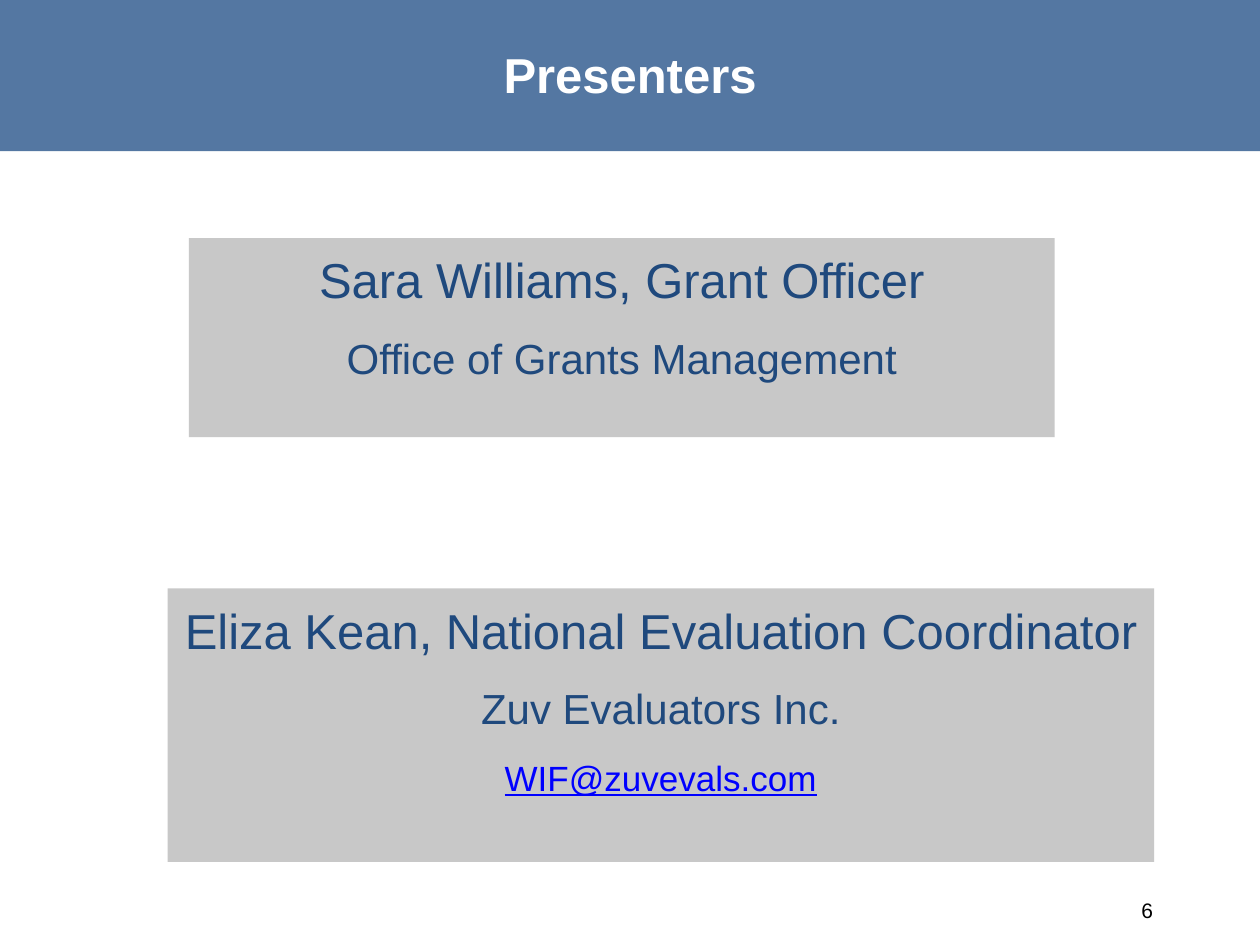
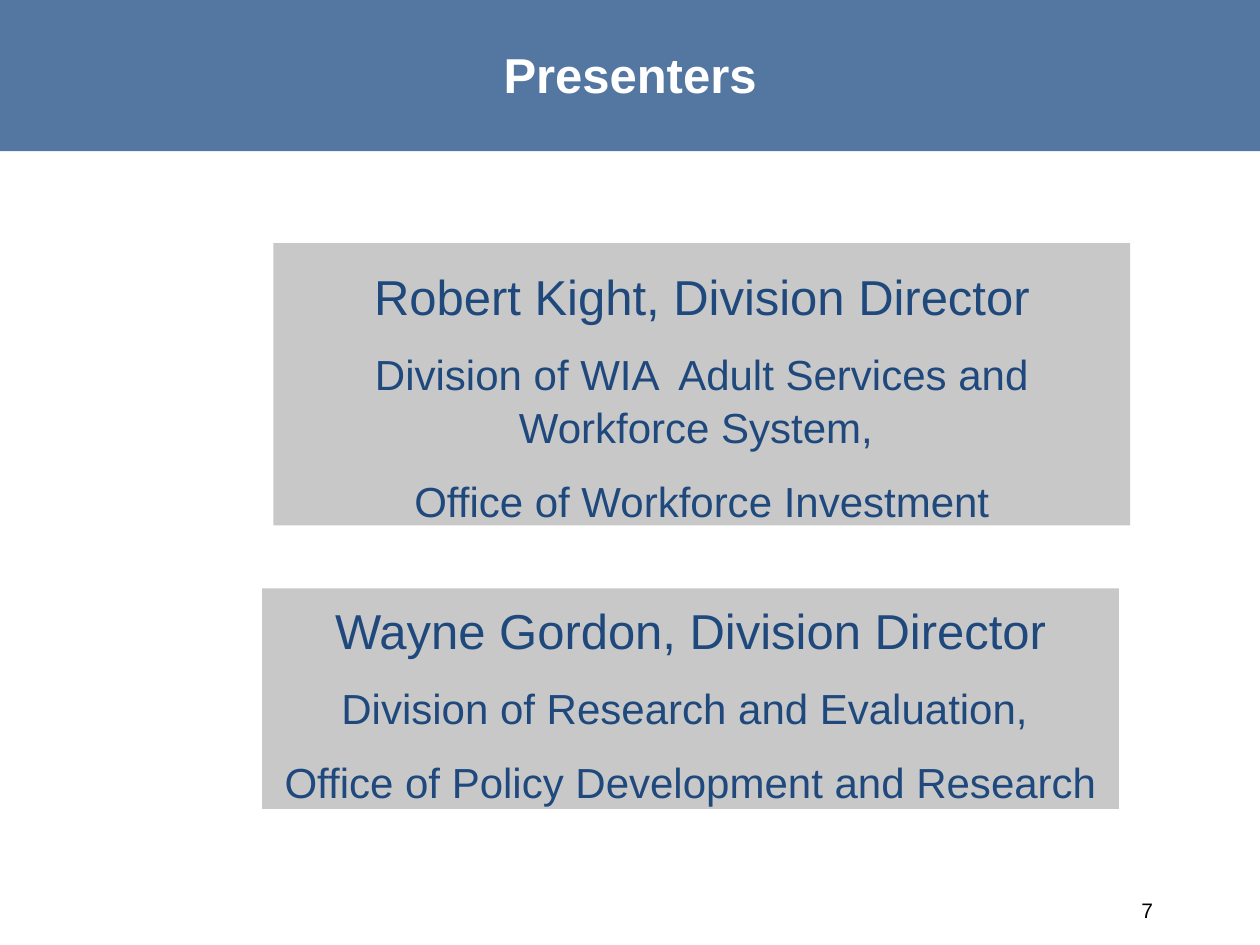
"""Build the two presenter slides."""
from lxml import etree
from pptx import Presentation
from pptx.dml.color import RGBColor
from pptx.enum.shapes import MSO_SHAPE
from pptx.enum.text import MSO_ANCHOR, PP_ALIGN
from pptx.oxml.ns import qn
from pptx.util import Inches, Pt

RECT = MSO_SHAPE.RECTANGLE
TOP, MIDDLE = MSO_ANCHOR.TOP, MSO_ANCHOR.MIDDLE
CENTER, RIGHT = PP_ALIGN.CENTER, PP_ALIGN.RIGHT

COLORS = {"band": "376092", "card": "BFBFBF", "text": "1F497D",
          "title": "FFFFFF", "link": "0000FF", "number": "000000"}
TITLE = "Presenters"
FIRST_NUMBER = 6
OPACITY = 85
GAP = 6
LEADING = 1.05

NAME = {"size": 28}
OFFICE = {"size": 24}
EMAIL = {"size": 20, "color": "link", "underline": True}

SLIDES = [
    [((1.5, 1.89, 6.87, 1.58), [
        ("Sara Williams, Grant Officer", NAME),
        ("Office of Grants Management", OFFICE)]),
     ((1.33, 4.67, 7.83, 2.17), [
         ("Eliza Kean, National Evaluation Coordinator", NAME),
         ("Zuv Evaluators Inc.", OFFICE),
         ("WIF@zuvevals.com", EMAIL)])],
    [((2.17, 1.93, 6.8, 2.24), [
        ("Robert Kight, Division Director", {**NAME, "leading": 1.25}),
        ("Division of WIA  Adult Services and Workforce System, ", OFFICE),
        ("Office of Workforce Investment", OFFICE)]),
     ((2.08, 4.67, 6.8, 1.75), [
         ("Wayne Gordon, Division Director", NAME),
         ("Division of Research and Evaluation, ", OFFICE),
         ("Office of Policy Development and Research", OFFICE)])],
]


def write(p, text, size=24, color="text", bold=False, underline=False,
          align=CENTER, leading=None, before=0, after=0):
    p.alignment = align
    p.space_before, p.space_after = Pt(before), Pt(after)
    if leading:
        p.line_spacing = leading
    r = p.add_run()
    r.text = text
    r.font.name = "Arial"
    r.font.size = Pt(size)
    r.font.bold = bold
    r.font.underline = underline
    r.font.color.rgb = RGBColor.from_string(COLORS[color])


def add_panel(s, box, color):
    sp = s.shapes.add_shape(RECT, *map(Inches, box))
    sp.shadow.inherit = False
    sp.line.fill.background()
    sp.fill.solid()
    sp.fill.fore_color.rgb = RGBColor.from_string(COLORS[color])
    rgb = sp.fill._xPr.find(".//" + qn("a:srgbClr"))
    etree.SubElement(rgb, qn("a:alpha")).set("val", str(OPACITY * 1000))
    return sp


def add_card(s, box, lines):
    tf = add_panel(s, box, "card").text_frame
    tf.word_wrap = True
    tf.vertical_anchor = TOP
    tf.margin_top = Inches(0.07)
    for i, (text, style) in enumerate(lines):
        p = tf.add_paragraph() if i else tf.paragraphs[0]
        write(p, text, **{"leading": LEADING, "before": GAP if i else 0,
                          "after": GAP, **style})


def add_frame(s, number):
    band = add_panel(s, (-0.01, 0, 10.01, 1.2), "band")
    s.shapes._spTree.insert(2, band._element)
    title = s.shapes.title
    title.left, title.top, title.width, title.height = map(
        Inches, (0, 0, 10, 1.17))
    title.text_frame.vertical_anchor = MIDDLE
    write(title.text_frame.paragraphs[0], TITLE, size=28, color="title",
          bold=True)
    tf = s.shapes.add_textbox(*map(Inches, (6.92, 7.02, 2.33, 0.4))).text_frame
    tf.word_wrap = True
    tf.vertical_anchor = MIDDLE
    write(tf.paragraphs[0], str(number), size=12, color="number", align=RIGHT)


def main():
    prs = Presentation()
    prs.slide_width, prs.slide_height = Inches(10), Inches(7.5)
    for number, cards in enumerate(SLIDES, FIRST_NUMBER):
        s = prs.slides.add_slide(prs.slide_layouts[5])
        add_frame(s, number)
        for box, lines in cards:
            add_card(s, box, lines)
    prs.save("out.pptx")


if __name__ == "__main__":
    main()
